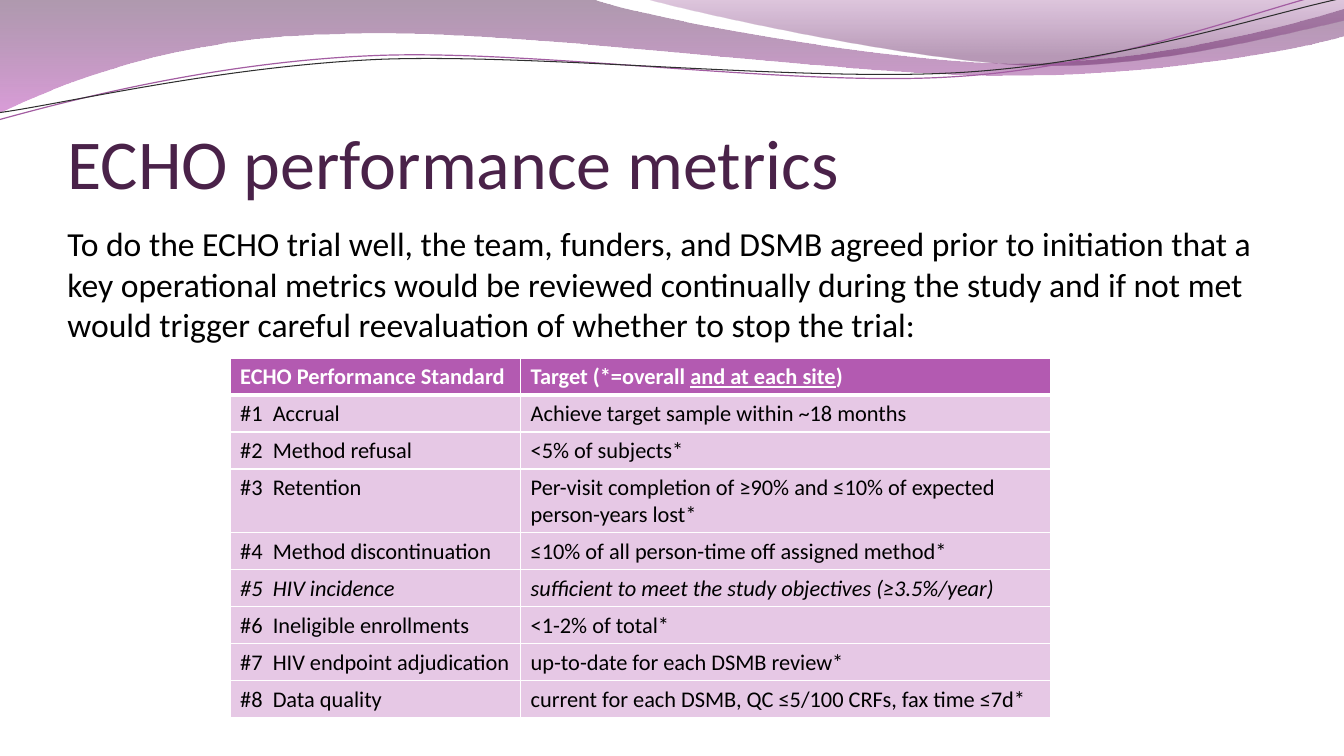
from pptx import Presentation
from pptx.dml.color import RGBColor as RGB
from pptx.enum.text import MSO_ANCHOR as Anchor, PP_ALIGN as Align
from pptx.oxml.ns import qn
from pptx.util import Cm, Pt
from lxml.etree import SubElement as Sub

FONT = "Calibri"
BLACK = RGB(0, 0, 0)
WHITE = RGB(255, 255, 255)
PLUM = RGB(0x4A, 0x22, 0x49)
HEAD = RGB(0xB3, 0x5A, 0xB1)
PALE = RGB(0xE6, 0xC8, 0xE5)
MAUVE = RGB(0xA3, 0x5D, 0xA2)
GREY = RGB(0x2F, 0x2F, 0x2F)
DARK = RGB(0x4D, 0x1E, 0x4C)
PINK = RGB(0xBC, 0x4B, 0xBA)
ROSE = RGB(0x92, 0x45, 0x91)
WINE = RGB(0x61, 0x1F, 0x5F)

# Paths in cm: a start, then lines (2 numbers) and cubic curves (6 numbers).
LEFT_WAVE = [
    (0, 0), (14.91, -0.03),
    (16.1, 0.43, 22.45, 1.6, 25.68, 1.6),
    (28.88, 1.6, 32.44, 0.66, 33.86, 0.23), (33.88, 0.91),
    (33.3, 1.12, 29.44, 1.93, 25.25, 1.91),
    (21.06, 1.91, 12.93, 0.71, 8.71, 0.86),
    (4.37, 0.91, 1.55, 2.11, -0.05, 2.87),
]
RIGHT_WAVE = [
    (16.21, -0.03),
    (17.25, 0.28, 23.09, 1.57, 26.04, 1.65),
    (28.96, 1.75, 32.56, 0.81, 33.86, 0.53), (33.86, 0),
]
# The two lines are given level and then tilted.
TILT = 357.3
MAUVE_LINE = [
    (-0.08, 2.22),
    (1.57, 1.85, 5.33, 1.03, 9.38, 1.05),
    (13.4, 1.06, 20, 2.36, 24.07, 2.27),
    (28.17, 2.21, 31.82, 0.9, 33.84, 0.55),
]
GREY_LINE = [
    (-0.07, 2.04),
    (1.54, 1.9, 5.54, 1.14, 9.59, 1.15),
    (13.65, 1.19, 20.19, 2.23, 24.24, 2.17),
    (28.28, 2.11, 31.92, 1.07, 33.91, 0.75),
]

INTRO = ("To do the ECHO trial well, the team, funders, and DSMB agreed prior to "
         "initiation that a key operational metrics would be reviewed continually "
         "during the study and if not met would trigger careful reevaluation of "
         "whether to stop the trial:")
GOALS = [
    ("Accrual", "Achieve target sample within ~18 months"),
    ("Method refusal", "<5% of subjects*"),
    ("Retention", "Per-visit completion of ≥90% and ≤10% of expected person-years lost*"),
    ("Method discontinuation", "≤10% of all person-time off assigned method*"),
    ("HIV incidence", "sufficient to meet the study objectives (≥3.5%/year)"),
    ("Ineligible enrollments", "<1-2% of total*"),
    ("HIV endpoint adjudication", "up-to-date for each DSMB review*"),
    ("Data quality", "current for each DSMB, QC ≤5/100 CRFs, fax time ≤7d*"),
]
TALL, SLANTED = 3, 5


def write(para, text, size=16, color=BLACK, bold=False, slant=False, under=False):
    """Add one formatted run to a paragraph."""
    run = para.add_run()
    run.text = text
    font = run.font
    font.name, font.size, font.color.rgb = FONT, Pt(size), color
    font.bold, font.italic, font.underline = bold, slant, under


def trace(slide, route, close):
    """Draw a route through all its points, then join each three of a curve."""
    pts = [(Cm(leg[i]), Cm(leg[i + 1])) for leg in route for i in range(0, len(leg), 2)]
    pen = slide.shapes.build_freeform(*pts[0])
    pen.add_line_segments(pts[1:], close=close)
    shape = pen.convert_to_shape()
    shape.shadow.inherit = False
    steps = iter(list(shape.element.iter(qn("a:lnTo"))))
    for leg in route[1:]:
        step = next(steps)
        if len(leg) == 6:
            step.tag = qn("a:cubicBezTo")
            for _ in range(2):
                extra = next(steps)
                step.append(extra[0])
                extra.getparent().remove(extra)
    return shape


def add_wave(slide, route, stops):
    """Draw a closed wave; each stop is place, colour and opacity in percent."""
    shape = trace(slide, route, True)
    shape.line.fill.background()
    fill = shape.fill
    fill.gradient()
    fill.gradient_angle = 270
    for stop, (place, color, _) in zip(fill.gradient_stops, stops):
        stop.position = place
        stop.color.rgb = color
    marks = shape.element.iter(qn("a:srgbClr"))
    for mark, (_, _, alpha) in zip(marks, stops):
        Sub(mark, qn("a:alpha"), val=str(alpha * 1000))


def add_line(slide, route, color, width):
    shape = trace(slide, route, False)
    shape.rotation = TILT
    shape.fill.background()
    shape.line.color.rgb = color
    shape.line.width = Pt(width)


def add_title(slide, text):
    title = slide.shapes.title
    title.left, title.top, title.width, title.height = Cm(1.7), Cm(1.96), Cm(30.48), Cm(3.18)
    frame = title.text_frame
    frame.margin_left = frame.margin_right = frame.margin_bottom = 0
    frame.vertical_anchor = Anchor.BOTTOM
    para = frame.paragraphs[0]
    para.alignment = Align.LEFT
    write(para, text, size=50, color=PLUM)


def add_intro(slide, text):
    box = slide.shapes.add_textbox(Cm(1.45), Cm(5.5), Cm(30.43), Cm(3.3))
    box.text_frame.word_wrap = True
    write(box.text_frame.paragraphs[0], text, size=24)


def style(cell, color, top=1, low=1):
    """Give a cell its white borders and its fill."""
    props = cell._tc.get_or_add_tcPr()
    for side, width in zip("LRTB", (1, 1, top, low)):
        edge = Sub(props, qn("a:ln" + side), w=str(Pt(width)))
        Sub(Sub(edge, qn("a:solidFill")), qn("a:srgbClr"), val=str(WHITE))
    cell.fill.solid()
    cell.fill.fore_color.rgb = color


def set_tab(para, place):
    tabs = Sub(para._p.get_or_add_pPr(), qn("a:tabLst"))
    Sub(tabs, qn("a:tab"), pos=str(place), algn="l")


def add_goals(slide):
    count = len(GOALS) + 1
    frame = slide.shapes.add_table(count, 2, Cm(5.8), Cm(9.02), Cm(20.68), Cm(9.07))
    table = frame.table
    for col, width in zip(table.columns, (7.32, 13.36)):
        col.width = Cm(width)
    for i, row in enumerate(table.rows):
        row.height = Cm(1.42 if i == TALL else 0.84)
        for cell in row.cells:
            style(cell, PALE if i else HEAD, top=3 if i == 1 else 1, low=1 if i else 3)
    frame.height = Cm(9.07)

    name, goal = [cell.text_frame.paragraphs[0] for cell in table.rows[0].cells]
    look = {"color": WHITE, "bold": True}
    write(name, "ECHO Performance Standard", **look)
    write(goal, "Target (*=overall ", **look)
    write(goal, "and at each site", under=True, **look)
    write(goal, ")", **look)
    for i, (label, target) in enumerate(GOALS, 1):
        name, goal = [cell.text_frame.paragraphs[0] for cell in table.rows[i].cells]
        set_tab(name, Cm(0.82))
        write(name, f"#{i}\t{label}", slant=i == SLANTED)
        write(goal, target, slant=i == SLANTED)


def main():
    deck = Presentation()
    deck.slide_width, deck.slide_height = Cm(33.87), Cm(19.05)
    slide = deck.slides.add_slide(deck.slide_layouts[5])
    add_wave(slide, LEFT_WAVE, [(0, DARK, 45), (1, PINK, 55)])
    add_wave(slide, RIGHT_WAVE, [(0, ROSE, 30), (0.8, WINE, 45)])
    add_line(slide, MAUVE_LINE, MAUVE, 0.85)
    add_line(slide, GREY_LINE, GREY, 0.75)
    add_intro(slide, INTRO)
    add_title(slide, "ECHO performance metrics")
    add_goals(slide)
    deck.save("out.pptx")


if __name__ == "__main__":
    main()
